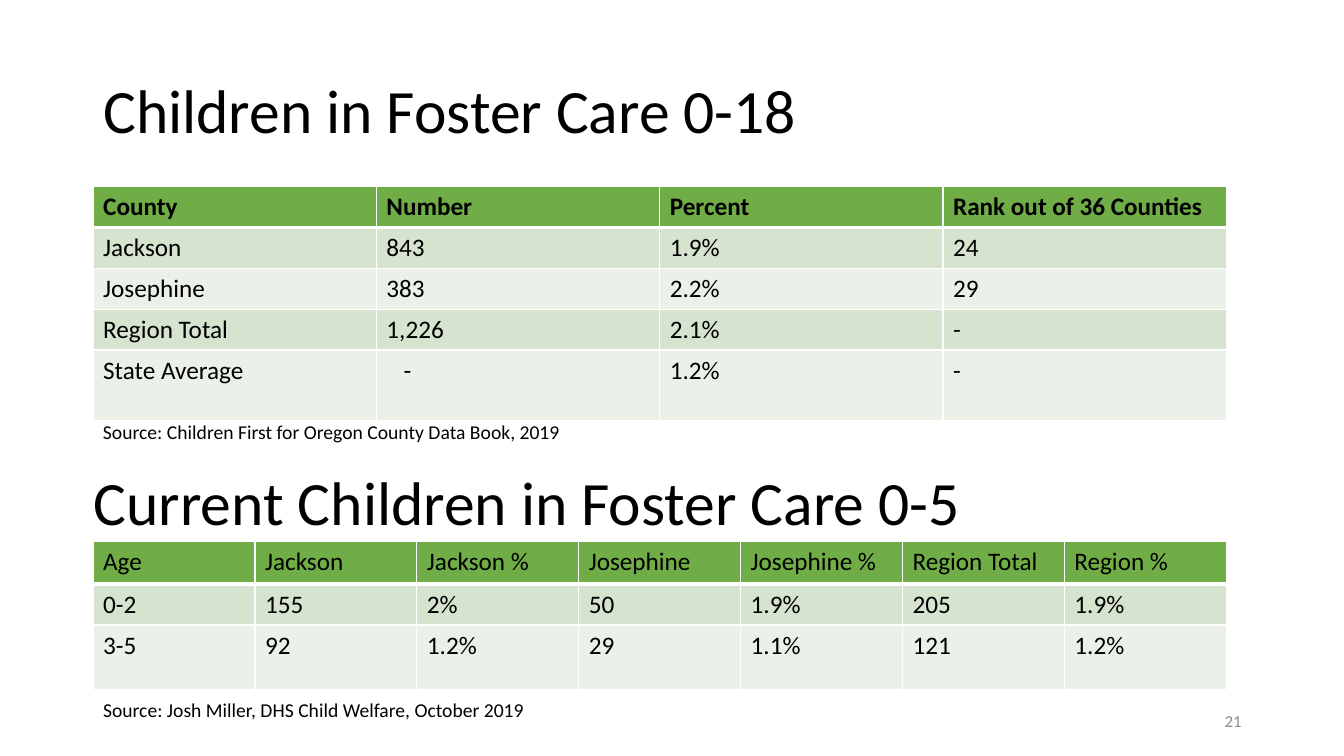
"""Build the slide on children in foster care, with two tables."""
from lxml import etree
from pptx import Presentation
from pptx.dml.color import RGBColor
from pptx.enum.text import MSO_ANCHOR, MSO_AUTO_SIZE, PP_ALIGN
from pptx.oxml.ns import qn
from pptx.util import Pt

LEFT, RIGHT = PP_ALIGN.LEFT, PP_ALIGN.RIGHT
TOP, MIDDLE = MSO_ANCHOR.TOP, MSO_ANCHOR.MIDDLE
NO_FIT = MSO_AUTO_SIZE.NONE

COLORS = {"text": "000000", "page": "8C8C8C", "line": "FFFFFF",
          "head": "70AD47", "odd": "D5E3CF", "even": "EBF1E9"}
FONT = "Calibri"
EDGE, WIDTH = 66.5, 809.5
INSET, DASH = 7.2, 12.2

TITLE = ("Children in Foster Care 0-18", (66.5, 28.8, 828, 104.4),
         44, "text", LEFT, MIDDLE)
NOTES = [
    ("Current Children in Foster Care 0-5", (59.8, 327.6, 803, 60.5),
     44, "text", LEFT, TOP),
    ("Source: Children First for Oregon County Data Book, 2019",
     (66.5, 296.6, 498, 24.5), 14, "text", LEFT, TOP),
    ("Source: Josh Miller, DHS Child Welfare, October 2019",
     (66.5, 494.8, 486, 24.5), 14, "text", LEFT, TOP),
    ("21", (678, 500.6, 216, 28.8), 12, "page", RIGHT, MIDDLE),
]
TABLES = [
    {"top": 133.2, "bold": True, "heights": [29.2, 29.2, 29.2, 29.2, 50.4],
     "indent": (4, 1),
     "rows": [
         ["County", "Number", "Percent", "Rank out of 36 Counties"],
         ["Jackson", "843", "1.9%", "24"],
         ["Josephine", "383", "2.2%", "29"],
         ["Region Total", "1,226", "2.1%", "-"],
         ["State Average", "-", "1.2%", "-"]]},
    {"top": 386.6, "bold": False, "heights": [30.7, 29.2, 46],
     "indent": None,
     "rows": [
         ["Age", "Jackson", "Jackson %", "Josephine", "Josephine %",
          "Region Total", "Region %"],
         ["0-2", "155", "2%", "50", "1.9%", "205", "1.9%"],
         ["3-5", "92", "1.2%", "29", "1.1%", "121", "1.2%"]]},
]


def style(font, size, color, bold=False):
    for name, value in {"name": FONT, "size": Pt(size), "bold": bold}.items():
        setattr(font, name, value)
    font.color.rgb = RGBColor.from_string(COLORS[color])


def write(shape, text, size, color, align, anchor):
    frame = shape.text_frame
    values = {"text": text, "word_wrap": True, "auto_size": NO_FIT,
              "vertical_anchor": anchor}
    for name, value in values.items():
        setattr(frame, name, value)
    para = frame.paragraphs[0]
    para.alignment = align
    style(para.font, size, color)
    return para


def border(cell, row):
    props = cell._tc.get_or_add_tcPr()
    widths = {"lnL": 1, "lnR": 1, "lnT": 3 if row == 1 else 1,
              "lnB": 3 if row == 0 else 1}
    for spot, (tag, width) in enumerate(widths.items()):
        line = etree.Element(qn("a:" + tag), w=str(int(Pt(width))))
        fill = etree.SubElement(line, qn("a:solidFill"))
        etree.SubElement(fill, qn("a:srgbClr"), val=COLORS["line"])
        props.insert(spot, line)


def draw(slide, data):
    rows, heights = data["rows"], data["heights"]
    count = len(rows[0])
    table = slide.shapes.add_table(
        len(rows), count, Pt(EDGE), Pt(data["top"]),
        Pt(WIDTH), Pt(sum(heights))).table
    for column in table.columns:
        column.width = Pt(WIDTH / count)
    for r, texts in enumerate(rows):
        table.rows[r].height = Pt(heights[r])
        shade = "head" if r == 0 else "odd" if r % 2 else "even"
        for c, text in enumerate(texts):
            cell = table.cell(r, c)
            cell.text = text
            cell.fill.solid()
            cell.fill.fore_color.rgb = RGBColor.from_string(COLORS[shade])
            if (r, c) == data["indent"]:
                cell.margin_left = Pt(INSET + DASH)
            style(cell.text_frame.paragraphs[0].font, 18, "text",
                  data["bold"] and r == 0)
            border(cell, r)


def main():
    deck = Presentation()
    deck.slide_width, deck.slide_height = Pt(960), Pt(540)
    slide = deck.slides.add_slide(deck.slide_layouts[5])
    title = slide.shapes.title
    text, box, *look = TITLE
    for name, value in zip(("left", "top", "width", "height"), box):
        setattr(title, name, Pt(value))
    write(title, text, *look).line_spacing = 0.9
    for data in TABLES:
        draw(slide, data)
    for text, box, *look in NOTES:
        write(slide.shapes.add_textbox(*map(Pt, box)), text, *look)
    deck.save("out.pptx")


if __name__ == "__main__":
    main()
